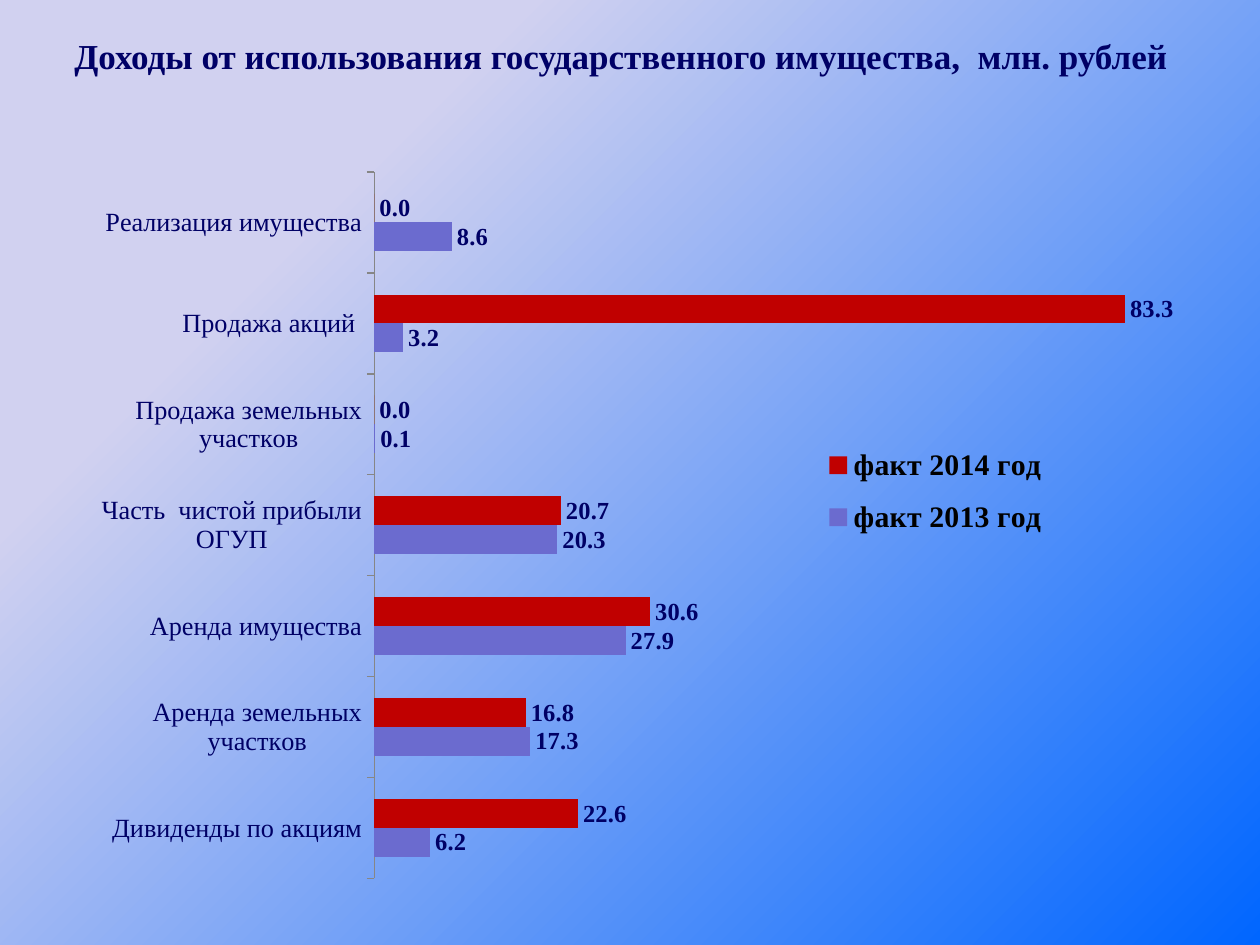
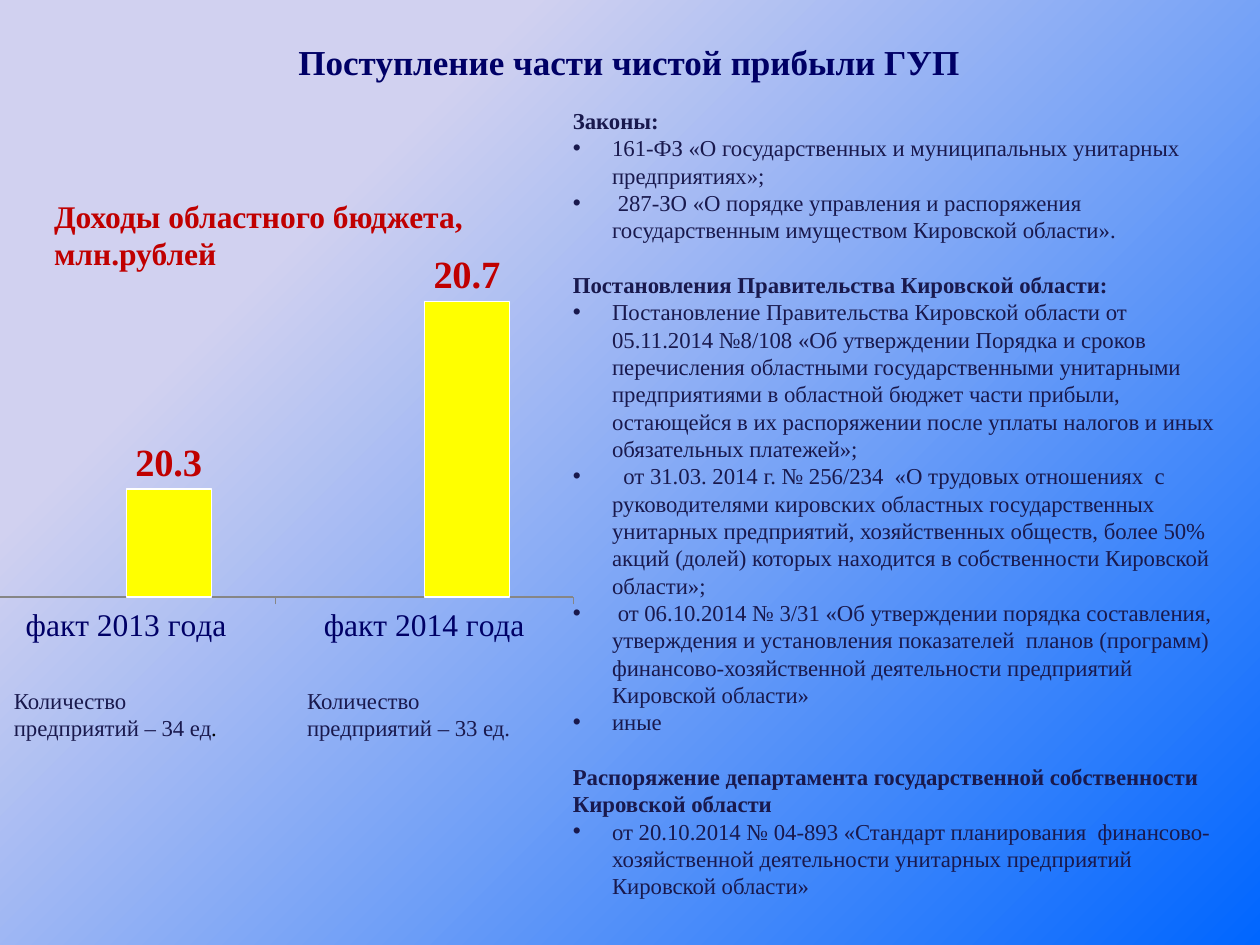
from pptx import Presentation
from pptx.util import Cm, Pt
from pptx.chart.data import CategoryChartData
from pptx.dml.color import RGBColor
from pptx.enum import chart as ch, text as tx
from pptx.oxml import parse_xml
from pptx.oxml.ns import nsdecls, qn


class Theme:
    font = "Times New Roman"
    pale, deep = "D1D1F0", "0066FF"
    navy, ink, black = "000066", "19194D", "000000"
    red, lilac, yellow = "C00000", "6B6BCF", "FFFF00"
    ice, white, gray = "BBE0E3", "FFFFFF", "868686"
    title, body, head = 20, 13, 18


def style(font, size, color, bold=False):
    font.name = Theme.font
    font.size = Pt(size)
    font.bold = bold
    font.color.rgb = RGBColor.from_string(color)


def place(part, index, x, y, w, h, inner=False):
    """Give a chart part a fixed place, in fractions of the chart."""
    for old in part.findall(qn("c:layout")):
        part.remove(old)
    target = '<c:layoutTarget val="inner"/>' if inner else ""
    modes = '<c:xMode val="edge"/><c:yMode val="edge"/>'
    sizes = "".join(f'<c:{k} val="{v}"/>' for k, v in zip("xywh", (x, y, w, h)))
    part.insert(index, parse_xml(
        f'<c:layout {nsdecls("c")}><c:manualLayout>{target}{modes}{sizes}'
        '</c:manualLayout></c:layout>'))


prs = Presentation()
prs.slide_width, prs.slide_height = Cm(25.4), Cm(19.05)

# Shared background
fill = prs.slide_master.background.fill
fill.gradient()
fill.gradient_angle = 315
for stop, color, pos in zip(fill.gradient_stops, (Theme.pale, Theme.deep), (0.24, 1)):
    stop.color.rgb = RGBColor.from_string(color)
    stop.position = pos

# Slides with their titles and charts
pages = [
    dict(title="Доходы от использования государственного имущества,  млн. рублей",
         head=(1.09, -0.48, 22.86, 3.18),
         kind=ch.XL_CHART_TYPE.BAR_CLUSTERED, at=(1.5, 3.12, 22.4, 14.6),
         plot=(0.27, 0.024, 0.73, 0.976), span=(0, 90), cat=15, label=(14, Theme.navy),
         cats=["Дивиденды по акциям", "Аренда земельных участков", "Аренда имущества",
               "Часть  чистой прибыли ОГУП", "Продажа земельных участков",
               "Продажа акций ", "Реализация имущества"],
         rows=[("факт 2013 год", (6.2, 17.3, 27.9, 20.3, 0.1, 3.2, 8.6), Theme.lilac),
               ("факт 2014 год", (22.6, 16.8, 30.6, 20.7, 0, 83.3, 0), Theme.red)]),
    dict(title="Поступление части чистой прибыли ГУП",
         head=(1.27, 0.53, 22.83, 1.4),
         kind=ch.XL_CHART_TYPE.COLUMN_CLUSTERED, at=(-0.71, 4.72, 12.52, 8.41),
         plot=(0.02, 0.05, 0.96, 0.82), span=(20.07, 20.8), cat=18, label=(22, Theme.red),
         cats=["факт 2013 года", "факт 2014 года"],
         rows=[("Series 1", (None, None), Theme.ice),
               ("Series 2", (20.3, 20.7), Theme.yellow)]),
]
charts = []
for page in pages:
    slide = prs.slides.add_slide(prs.slide_layouts[5])
    title = slide.shapes.title
    title.left, title.top, title.width, title.height = map(Cm, page["head"])
    frame = title.text_frame
    frame.text = page["title"]
    frame.auto_size = tx.MSO_AUTO_SIZE.NONE
    frame.vertical_anchor = tx.MSO_ANCHOR.MIDDLE
    frame.paragraphs[0].alignment = tx.PP_ALIGN.CENTER
    style(frame.paragraphs[0].runs[0].font, Theme.title, Theme.navy, True)

    data = CategoryChartData(number_format="0.0")
    data.categories = page["cats"]
    for name, vals, _ in page["rows"]:
        data.add_series(name, vals)
    chart = slide.shapes.add_chart(page["kind"], *map(Cm, page["at"]), data).chart
    charts.append(chart)
    style(chart.font, 10, Theme.black)
    chart.has_title = chart.has_legend = False
    place(chart._chartSpace.chart.plotArea, 0, *page["plot"], inner=True)

    axis = chart.value_axis
    axis.minimum_scale, axis.maximum_scale = page["span"]
    axis.has_major_gridlines = False
    axis.visible = False
    axis = chart.category_axis
    axis.major_tick_mark = ch.XL_TICK_MARK.OUTSIDE
    axis.format.line.color.rgb = RGBColor.from_string(Theme.gray)
    style(axis.tick_labels.font, page["cat"], Theme.navy)

    plot = chart.plots[0]
    plot.gap_width, plot.overlap = 150, 0
    plot.vary_by_categories = False
    for row, (_, vals, color) in zip(plot.series, page["rows"]):
        row.invert_if_negative = False
        row.format.fill.solid()
        row.format.fill.fore_color.rgb = RGBColor.from_string(color)
        if color == Theme.yellow:
            row.format.line.color.rgb = RGBColor.from_string(Theme.white)
            row.format.line.width = Pt(0.75)
        if vals[0] is not None:
            tags = row.data_labels
            tags.show_value = True
            tags.number_format, tags.number_format_is_linked = "0.0", False
            tags.position = ch.XL_LABEL_POSITION.OUTSIDE_END
            style(tags.font, *page["label"], True)

# Legend of the income chart
chart = charts[0]
chart.has_legend = True
key = chart.legend
key.position = ch.XL_LEGEND_POSITION.RIGHT
key.include_in_layout = False
style(key.font, 17, Theme.black, True)
place(key._element, 1, 0.67, 0.38, 0.21, 0.17)

# Text beside the profit chart: place, size, colour, then lines (mark, words)
laws = [
    ("h", "Законы:"),
    ("•", "161-ФЗ «О государственных и муниципальных унитарных предприятиях»;"),
    ("•", " 287-ЗО «О порядке управления и распоряжения государственным имуществом "
          "Кировской области»."),
    ("h", "Постановления Правительства Кировской области:"),
    ("•", "Постановление Правительства Кировской области от 05.11.2014 №8/108 "
          "«Об утверждении Порядка и сроков перечисления областными государственными "
          "унитарными предприятиями в областной бюджет части прибыли, остающейся в их "
          "распоряжении после уплаты налогов и иных обязательных платежей»;"),
    ("•", "  от 31.03. 2014 г. № 256/234  «О трудовых отношениях  с руководителями "
          "кировских областных государственных унитарных предприятий, хозяйственных "
          "обществ, более 50% акций (долей) которых находится в собственности "
          "Кировской области»;"),
    ("•", " от 06.10.2014 № 3/31 «Об утверждении порядка составления, утверждения и "
          "установления показателей  планов (программ) финансово-хозяйственной "
          "деятельности предприятий Кировской области»"),
    ("•", "иные"),
    ("h", "Распоряжение департамента государственной собственности Кировской области"),
    ("•", "от 20.10.2014 № 04-893 «Стандарт планирования  финансово-хозяйственной "
          "деятельности унитарных предприятий Кировской области»"),
]
notes = [
    ((0.84, 3.84, 8.79, 1.8), Theme.head, Theme.red,
     [("h", "Доходы областного бюджета, млн.рублей")]),
    ((11.3, 2.03, 13.79, 18.29), Theme.body, Theme.ink, laws),
    ((0.03, 13.72, 6.6, 1.37), Theme.body, Theme.ink,
     [("", "Количество"), ("", "предприятий – 34 ед")]),
    ((5.94, 13.72, 6.05, 1.37), Theme.body, Theme.ink,
     [("", "Количество"), ("", "предприятий – 33 ед.")]),
]
boxes = []
for at, size, color, lines in notes:
    frame = slide.shapes.add_textbox(*map(Cm, at)).text_frame
    boxes.append(frame)
    frame.word_wrap = True
    frame.text = "\n".join(words for _, words in lines)
    for i, (par, (mark, _)) in enumerate(zip(frame.paragraphs, lines)):
        style(par.runs[0].font, size, color, mark == "h")
        if mark == "h" and i:
            par.space_before = Pt(15.6)
        if mark == "•":
            props = par._p.get_or_add_pPr()
            props.set("marL", str(Cm(0.79)))
            props.set("indent", str(Cm(-0.79)))
            props.append(parse_xml(f'<a:buFont {nsdecls("a")} typeface="Arial"/>'))
            props.append(parse_xml(f'<a:buChar {nsdecls("a")} char="•"/>'))

# Black full stop after the first count
dot = boxes[2].paragraphs[1].add_run()
dot.text = "."
style(dot.font, Theme.body, Theme.black)

prs.save("out.pptx")
